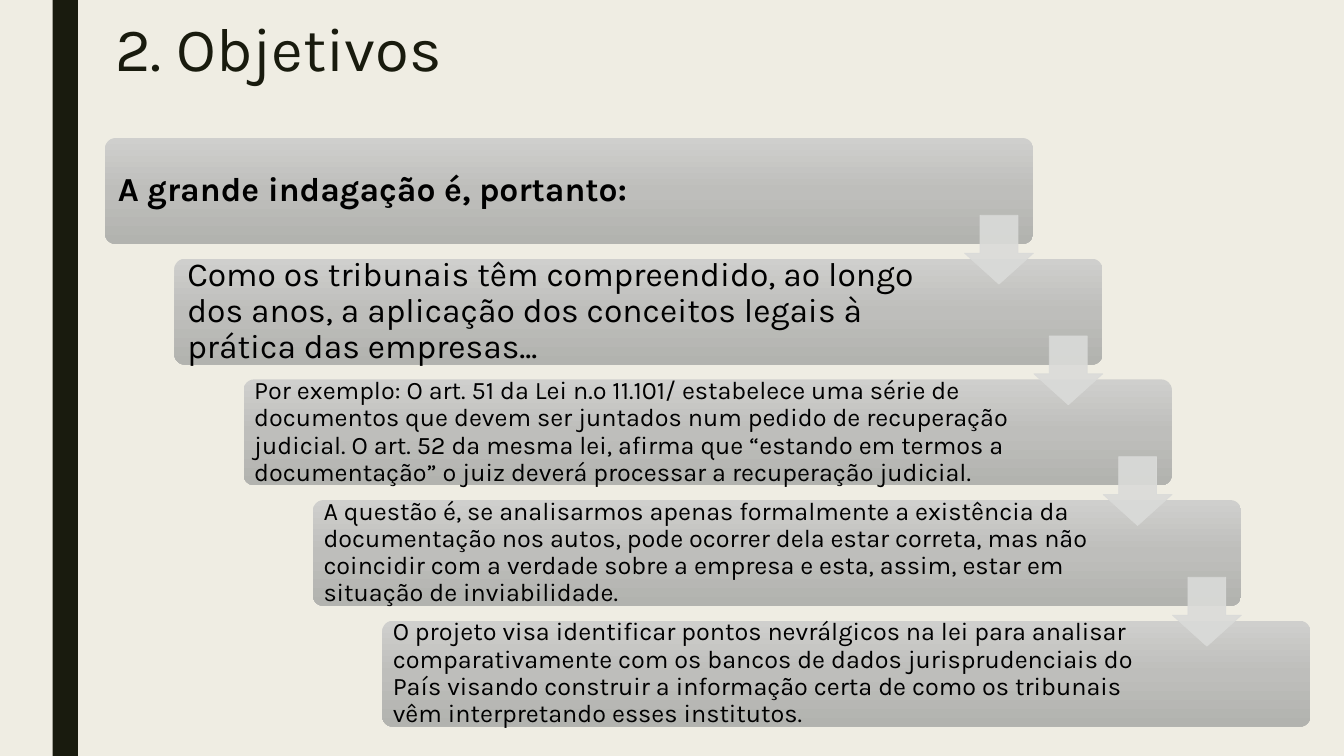
import copy

import lxml.etree
import pptx
import pptx.dml.color
import pptx.enum.shapes
import pptx.enum.text
import pptx.oxml.ns
import pptx.util

Pt = pptx.util.Pt
SHAPES = pptx.enum.shapes.MSO_SHAPE
ANCHORS = pptx.enum.text.MSO_ANCHOR

FONT = "Karla"
COLOURS = {
    "background": "EFEDE3",
    "ink": "191B0E",
    "text": "000000",
    "card_top": "CFCFCD",
    "card_middle": "BEBEBB",
    "card_bottom": "B2B3AF",
    "arrow": "DADBD9",
}

# Staircase geometry, in points
CARD_LEFT, CARD_TOP = 75, 98.6
CARD_WIDTH, CARD_HEIGHT = 663, 75.6
STEP_X, STEP_Y = 49.5, 86.2
TEXT_INSET = 2.2
ARROW_LEFT, ARROW_TOP, ARROW_SIZE = 689, 153.8, 49.2

# Text, width of its box, inner margin, format
STEPS = [
    ("A grande indagação é, portanto:",
     572.4, 7.2, {"size": Pt(24), "bold": True}),
    ("Como os tribunais têm compreendido, ao longo dos anos, a aplicação dos "
     "conceitos legais à prática das empresas...",
     559.4, 7.2, {"size": Pt(24)}),
    ("Por exemplo: O art. 51 da Lei n.º 11.101/ estabelece uma série de "
     "documentos que devem ser juntados num pedido de recuperação judicial. "
     "O art. 52 da mesma lei, afirma que “estando em termos a documentação” "
     "o juiz deverá processar a recuperação judicial.",
     559.4, 5.4, {"size": Pt(18)}),
    ("A questão é, se analisarmos apenas formalmente a existência da "
     "documentação nos autos, pode ocorrer dela estar correta, mas não "
     "coincidir com a verdade sobre a empresa e esta, assim, estar em "
     "situação de inviabilidade.",
     559.4, 5.4, {"size": Pt(18)}),
    ("O projeto visa identificar pontos nevrálgicos na lei para analisar "
     "comparativamente com os bancos de dados jurisprudenciais do País "
     "visando construir a informação certa de como os tribunais vêm "
     "interpretando esses institutos.",
     559.4, 5.4, {"size": Pt(18)}),
]


def colour(name):
    return pptx.dml.color.RGBColor.from_string(COLOURS[name])


def set_all(target, values):
    for name, value in values.items():
        setattr(target, name, value)


def write(shape, text, colour_name, spacing, frame_format, font_format):
    frame = shape.text_frame
    set_all(frame, {"word_wrap": True,
                    "auto_size": pptx.enum.text.MSO_AUTO_SIZE.NONE,
                    **frame_format})
    para = frame.paragraphs[0]
    set_all(para, {"alignment": pptx.enum.text.PP_ALIGN.LEFT,
                   "line_spacing": spacing})
    span = para.add_run()
    span.text = text
    set_all(span.font, {"name": FONT, **font_format})
    span.font.color.rgb = colour(colour_name)


def add_shape(page, kind, left, top, width, height, adjustments=()):
    shape = page.shapes.add_shape(kind, Pt(left), Pt(top), Pt(width), Pt(height))
    shape.shadow.inherit = False
    shape.line.fill.background()
    for index, value in enumerate(adjustments):
        shape.adjustments[index] = value
    return shape


def add_bar(page):
    bar = add_shape(page, SHAPES.RECTANGLE, 37.6, 0, 18, 540)
    bar.fill.solid()
    bar.fill.fore_color.rgb = colour("ink")


def add_title(page, text):
    title = page.shapes.title
    set_all(title, {"left": Pt(75), "top": Pt(10),
                    "width": Pt(861), "height": Pt(79)})
    write(title, text, "ink", 0.89,
          {"vertical_anchor": ANCHORS.TOP}, {"size": Pt(44)})


def add_card(page, left, top):
    card = add_shape(page, SHAPES.ROUNDED_RECTANGLE, left, top,
                     CARD_WIDTH, CARD_HEIGHT, [0.1])
    card.fill.gradient()
    card.fill.gradient_angle = 270
    # A third stop halfway down
    stops = card._element.spPr.find(".//" + pptx.oxml.ns.qn("a:gsLst"))
    middle = copy.deepcopy(stops[0])
    middle.set("pos", "50000")
    stops.insert(1, middle)
    names = ("card_top", "card_middle", "card_bottom")
    for stop, name in zip(card.fill.gradient_stops, names):
        stop.color.rgb = colour(name)


def add_card_text(page, left, top, text, width, margin, font_format):
    box = page.shapes.add_textbox(Pt(left + TEXT_INSET), Pt(top + TEXT_INSET),
                                  Pt(width), Pt(CARD_HEIGHT - 2 * TEXT_INSET))
    margins = {f"margin_{side}": Pt(margin)
               for side in ("left", "top", "right", "bottom")}
    write(box, text, "text", 0.9,
          {"vertical_anchor": ANCHORS.MIDDLE, **margins}, font_format)


def add_arrow(page, left, top):
    arrow = add_shape(page, SHAPES.DOWN_ARROW, left, top,
                      ARROW_SIZE, ARROW_SIZE, [0.55, 0.45])
    arrow.line.width = Pt(0.5)
    for fill in (arrow.fill, arrow.line.fill):
        fill.solid()
        fill.fore_color.rgb = colour("arrow")
    # 90 % opacity on fill and line
    for node in arrow._element.spPr.findall(".//" + pptx.oxml.ns.qn("a:srgbClr")):
        lxml.etree.SubElement(node, pptx.oxml.ns.qn("a:alpha"), val="90000")


def main():
    deck = pptx.Presentation()
    set_all(deck, {"slide_width": Pt(960), "slide_height": Pt(540)})
    page = deck.slides.add_slide(deck.slide_layouts.get_by_name("Title Only"))
    page.background.fill.solid()
    page.background.fill.fore_color.rgb = colour("background")

    add_bar(page)
    add_title(page, "2. Objetivos")

    # Cards stepping down to the right
    for index, (text, width, margin, font_format) in enumerate(STEPS):
        left, top = CARD_LEFT + index * STEP_X, CARD_TOP + index * STEP_Y
        add_card(page, left, top)
        add_card_text(page, left, top, text, width, margin, font_format)

    # Arrows between neighbouring cards
    for index in range(len(STEPS) - 1):
        add_arrow(page, ARROW_LEFT + index * STEP_X, ARROW_TOP + index * STEP_Y)

    deck.save("out.pptx")


if __name__ == "__main__":
    main()
